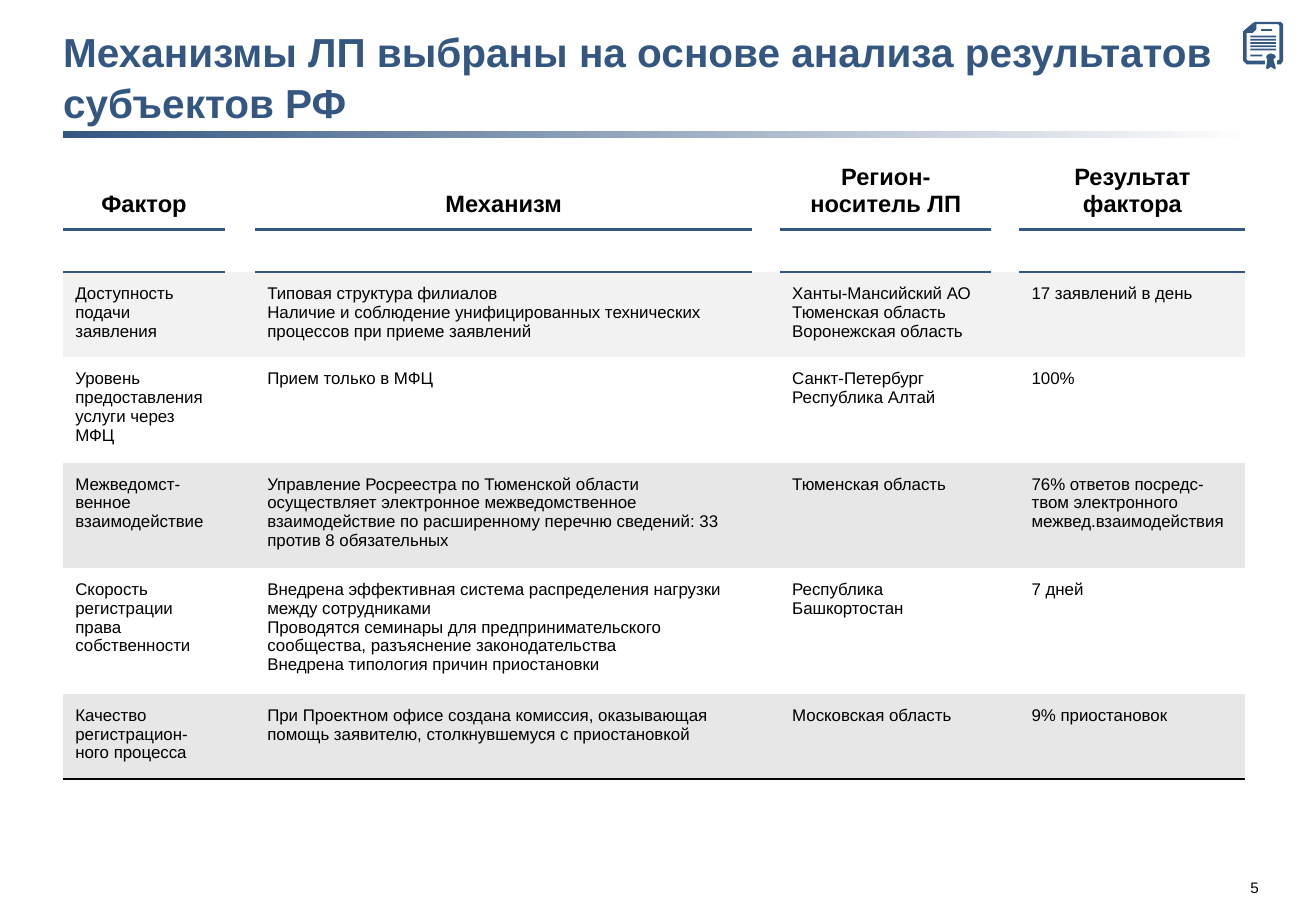
import pptx
import pptx.dml.color
import pptx.enum.shapes
import pptx.enum.text
import pptx.oxml
import pptx.oxml.ns
import pptx.util

Inches = pptx.util.Inches
ALIGN = pptx.enum.text.PP_ALIGN
ANCHOR = pptx.enum.text.MSO_ANCHOR
RECTANGLE = pptx.enum.shapes.MSO_SHAPE.RECTANGLE

BLUE, BLACK, WHITE = "345782", "000000", "FFFFFF"
NO_GRID_STYLE = "{2D5ABB26-0587-4C30-8999-92F81FD0307C}"

COLUMN_WIDTHS = [1.33, 0.25, 4.09, 0.23, 1.74, 0.23, 1.86]
HEADERS = ["Фактор", "Механизм", "Регион-носитель ЛП", "Результат фактора"]
FACTORS = [
    (0.66, "F2F2F2", [
        "Доступность подачи заявления",
        "Типовая структура филиалов\n"
        "Наличие и соблюдение унифицированных технических процессов при приеме заявлений",
        "Ханты-Мансийский АО\nТюменская область\nВоронежская область",
        "17 заявлений в день"]),
    (0.82, WHITE, [
        "Уровень предоставления услуги через МФЦ",
        "Прием только в МФЦ",
        "Санкт-Петербург\nРеспублика Алтай",
        "100%"]),
    (0.82, "E7E7E7", [
        "Межведомст-венное взаимодействие",
        "Управление Росреестра по Тюменской области осуществляет электронное "
        "межведомственное взаимодействие по расширенному перечню сведений: "
        "33 против 8 обязательных",
        "Тюменская область",
        "76% ответов посредс-твом электронного межвед.взаимодействия"]),
    (0.98, WHITE, [
        "Скорость регистрации права собственности",
        "Внедрена эффективная система распределения нагрузки между сотрудниками\n"
        "Проводятся семинары для предпринимательского сообщества, "
        "разъяснение законодательства\n"
        "Внедрена типология причин приостановки",
        "Республика Башкортостан",
        "7 дней"]),
    (0.66, "E7E7E7", [
        "Качество регистрацион-ного процесса",
        "При Проектном офисе создана комиссия, оказывающая помощь заявителю, "
        "столкнувшемуся с приостановкой",
        "Московская область",
        "9% приостановок"]),
]

PAGE_OUTLINE = [
    (10, 0), (31, 0), (33, 2), (33, 32), (31, 35), (28, 35), (28, 32), (30, 31),
    (30, 3), (29, 2), (11, 2), (11, 6), (8, 9), (3, 9), (3, 31), (4, 32),
    (18, 32), (18, 35), (3, 35), (0, 32), (0, 8), (1, 7), (8, 1)]
SEAL_OUTLINE = [
    (27, 29), (26, 27), (23, 26), (20, 27), (19, 29), (20, 31),
    (19, 38), (20, 39), (23, 37), (26, 39), (27, 38), (25, 31)]


def color(value):
    return pptx.dml.color.RGBColor.from_string(value)


def write_text(frame, text, size=10, fill=BLACK, bold=False, align=ALIGN.LEFT, spacing=1.0):
    for index, line in enumerate(text.split("\n")):
        paragraph = frame.add_paragraph() if index else frame.paragraphs[0]
        paragraph.alignment = align
        paragraph.line_spacing = spacing
        run = paragraph.add_run()
        run.text = line
        run.font.name = "Arial"
        run.font.size = pptx.util.Pt(size)
        run.font.bold = bold
        run.font.color.rgb = color(fill)


def add_text_box(slide, left, top, width, height, text, padding=0, anchor=ANCHOR.TOP, **text_format):
    box = slide.shapes.add_textbox(Inches(left), Inches(top), Inches(width), Inches(height))
    frame = box.text_frame
    frame.word_wrap = True
    frame.vertical_anchor = anchor
    frame.margin_left = frame.margin_right = 0
    frame.margin_top = frame.margin_bottom = Inches(padding)
    write_text(frame, text, **text_format)


def add_heading(slide, left, top, width, height):
    bar = slide.shapes.add_shape(
        RECTANGLE, Inches(left), Inches(top + height - 0.01), Inches(width), Inches(0.06))
    bar.shadow.inherit = False
    bar.line.fill.background()
    bar.fill.gradient()
    bar.fill.gradient_angle = 0
    for stop, position, value in zip(bar.fill.gradient_stops, (0, 1), (BLUE, WHITE)):
        stop.position = position
        stop.color.rgb = color(value)
    add_text_box(
        slide, left, top, width, height,
        "Механизмы ЛП выбраны на основе анализа результатов субъектов РФ",
        padding=0.05, anchor=ANCHOR.BOTTOM, size=24, fill=BLUE, bold=True, spacing=1.05)


def bar_outline(left, top, width):
    right, bottom = left + width, top + 1.5
    return [(left, top), (right, top), (right, bottom), (left, bottom)]


def add_document_icon(slide, left, top):
    text_bars = [bar_outline(6, 11.3 + 2.7 * index, 21) for index in range(5)]
    outlines = [PAGE_OUTLINE, SEAL_OUTLINE, bar_outline(15, 6, 9), bar_outline(6, 27, 10)]
    builder = None
    for outline in outlines + text_bars:
        points = [(Inches(left + x / 100), Inches(top + y / 100)) for x, y in outline]
        if builder is None:
            builder = slide.shapes.build_freeform(*points[0])
        else:
            builder.move_to(*points[0])
        builder.add_line_segments(points[1:], close=True)
    icon = builder.convert_to_shape()
    icon.shadow.inherit = False
    icon.fill.solid()
    icon.fill.fore_color.rgb = color(BLUE)
    icon.line.fill.background()


def add_bottom_border(cell, value, width):
    border = pptx.oxml.parse_xml(
        f'<a:lnB {pptx.oxml.ns.nsdecls("a")} w="{pptx.util.Pt(width)}">'
        f'<a:solidFill><a:srgbClr val="{value}"/></a:solidFill></a:lnB>')
    cell._tc.get_or_add_tcPr().insert(0, border)


def fill_row(table, row, fill, texts, anchor=ANCHOR.TOP, **text_format):
    for column in range(len(COLUMN_WIDTHS)):
        cell = table.cell(row, column)
        cell.fill.solid()
        cell.fill.fore_color.rgb = color(fill)
        is_text = bool(texts) and column % 2 == 0
        margin = Inches(0.1 if is_text else 0)
        cell.margin_left = cell.margin_right = margin
        cell.margin_top = cell.margin_bottom = margin
        if is_text:
            cell.vertical_anchor = anchor
            write_text(cell.text_frame, texts[column // 2], **text_format)


def add_factor_table(slide, left, top):
    heights = [0.73, 0.35] + [height for height, _, _ in FACTORS]
    frame = slide.shapes.add_table(
        len(heights), len(COLUMN_WIDTHS), Inches(left), Inches(top),
        Inches(sum(COLUMN_WIDTHS)), Inches(sum(heights)))
    table = frame.table
    table.first_row = table.horz_banding = False
    table._tbl.tblPr.find(pptx.oxml.ns.qn("a:tableStyleId")).text = NO_GRID_STYLE
    for column, width in zip(table.columns, COLUMN_WIDTHS):
        column.width = Inches(width)
    for row, height in zip(table.rows, heights):
        row.height = Inches(height)

    fill_row(table, 0, WHITE, HEADERS, anchor=ANCHOR.BOTTOM, size=14, bold=True, align=ALIGN.CENTER)
    fill_row(table, 1, WHITE, [])
    for row, (_, fill, texts) in enumerate(FACTORS, start=2):
        fill_row(table, row, fill, texts)

    for column in range(len(COLUMN_WIDTHS)):
        if column % 2 == 0:
            add_bottom_border(table.cell(0, column), BLUE, 1.5)
            add_bottom_border(table.cell(1, column), BLUE, 1.5)
        add_bottom_border(table.cell(len(heights) - 1, column), BLACK, 2)


def main():
    presentation = pptx.Presentation()
    presentation.slide_width = Inches(10.83)
    presentation.slide_height = Inches(7.5)
    slide = presentation.slides.add_slide(presentation.slide_layouts[6])
    add_text_box(slide, 10.15, 7.23, 0.21, 0.14, "5", size=9, align=ALIGN.RIGHT)
    add_heading(slide, 0.52, 0.18, 9.8, 0.91)
    add_factor_table(slide, 0.52, 1.16)
    add_document_icon(slide, 10.23, 0.18)
    presentation.save("out.pptx")


if __name__ == "__main__":
    main()
